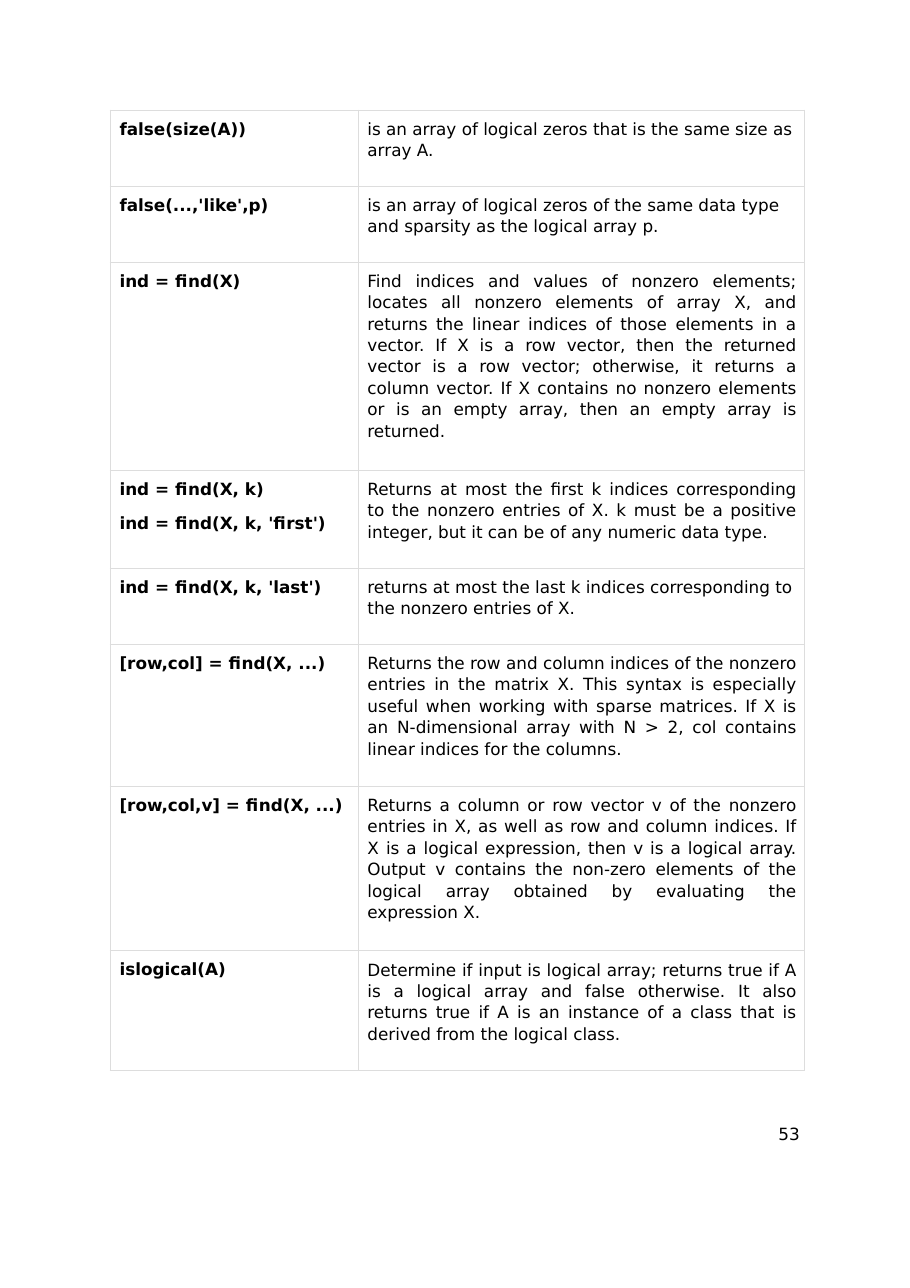
from dataclasses import dataclass

from lxml.etree import SubElement as add_child
from pptx import Presentation
from pptx.dml.color import RGBColor as Color
from pptx.enum.text import MSO_ANCHOR as Anchor, PP_ALIGN as Align
from pptx.oxml import parse_xml
from pptx.oxml.ns import nsdecls, qn
from pptx.slide import Slide
from pptx.util import Pt

COLORS = {"text": "000000", "border": "DDDDDD", "page": "FFFFFF"}
COLUMN_WIDTHS = [162.1, 292.2]
ROWS = [
    (49.7, ["false(size(A))"], Align.LEFT,
     "is an array of logical zeros that is the same size as array A."),
    (49.7, ["false(...,'like',p)"], Align.LEFT,
     "is an array of logical zeros of the same data type and sparsity as the "
     "logical array p."),
    (136.1, ["ind = find(X)"], Align.JUSTIFY,
     "Find indices and values of nonzero elements; locates all nonzero elements "
     "of array X, and returns the linear indices of those elements in a vector. "
     "If X is a row vector, then the returned vector is a row vector; otherwise, "
     "it returns a column vector. If X contains no nonzero elements or is an "
     "empty array, then an empty array is returned."),
    (64, ["ind = find(X, k)", "ind = find(X, k, 'first')"], Align.JUSTIFY,
     "Returns at most the first k indices corresponding to the nonzero entries "
     "of X. k must be a positive integer, but it can be of any numeric data type."),
    (49.7, ["ind = find(X, k, 'last')"], Align.LEFT,
     "returns at most the last k indices corresponding to the nonzero entries of X."),
    (92.9, ["[row,col] = find(X, ...)"], Align.JUSTIFY,
     "Returns the row and column indices of the nonzero entries in the matrix X. "
     "This syntax is especially useful when working with sparse matrices. If X is "
     "an N-dimensional array with N > 2, col contains linear indices for the columns."),
    (107.5, ["[row,col,v] = find(X, ...)"], Align.JUSTIFY,
     "Returns a column or row vector v of the nonzero entries in X, as well as row "
     "and column indices. If X is a logical expression, then v is a logical array. "
     "Output v contains the non-zero elements of the logical array obtained by "
     "evaluating the expression X."),
    (78.5, ["islogical(A)"], Align.JUSTIFY,
     "Determine if input is logical array; returns true if A is a logical array "
     "and false otherwise. It also returns true if A is an instance of a class "
     "that is derived from the logical class."),
]


@dataclass
class PageBuilder:
    """Draw styled elements on one slide, with lengths in points."""

    slide: Slide
    font: str = "DejaVu Sans"
    size: float = 11
    tracking: str = "-3"

    def background(self):
        fill = self.slide.background.fill
        fill.solid()
        fill.fore_color.rgb = Color.from_string(COLORS["page"])

    def add_lines(self, frame, lines, bold=False, align=Align.LEFT, spacing=1.0, gap=0):
        frame.word_wrap = True
        for index, line in enumerate(lines):
            para = frame.add_paragraph() if index else frame.paragraphs[0]
            para.alignment = align
            para.line_spacing = spacing
            if index:
                para.space_before = Pt(gap)
            para.font.name = self.font
            para.font.size = Pt(self.size)
            para.font.bold = bold
            para.font.color.rgb = Color.from_string(COLORS["text"])
            span = para.add_run()
            span.text = line
            span._r.get_or_add_rPr().set("spc", self.tracking)

    def style_cell(self, cell, top):
        cell.margin_left, cell.margin_top = Pt(6.2), Pt(top)
        cell.margin_right, cell.margin_bottom = Pt(5.4), Pt(0)
        cell.vertical_anchor = Anchor.TOP
        cell.fill.background()
        properties = cell._tc.get_or_add_tcPr()
        for index, side in enumerate("LRTB"):
            line = parse_xml(f'<a:ln{side} {nsdecls("a")} w="{Pt(0.75)}"/>')
            fill = add_child(line, qn("a:solidFill"))
            add_child(fill, qn("a:srgbClr")).set("val", COLORS["border"])
            properties.insert(index, line)

    def table(self, left, top, widths, rows):
        height = sum(row[0] for row in rows)
        frame = self.slide.shapes.add_table(
            len(rows), len(widths), Pt(left), Pt(top), Pt(sum(widths)), Pt(height))
        table = frame.table
        table.first_row = table.horz_banding = False
        for column, width in zip(table.columns, widths):
            column.width = Pt(width)
        for index, (height, syntax, align, meaning) in enumerate(rows):
            table.rows[index].height = Pt(height)
            name_cell, meaning_cell = table.cell(index, 0), table.cell(index, 1)
            self.style_cell(name_cell, 6.2)
            self.style_cell(meaning_cell, 5.2)
            self.add_lines(name_cell.text_frame, syntax, bold=True, gap=9.2)
            self.add_lines(meaning_cell.text_frame, [meaning], align=align, spacing=1.09)

    def page_number(self, left, top, width, height, number):
        box = self.slide.shapes.add_textbox(Pt(left), Pt(top), Pt(width), Pt(height))
        frame = box.text_frame
        frame.margin_left, frame.margin_top = Pt(8.6), Pt(1.1)
        frame.margin_right = frame.margin_bottom = Pt(0)
        self.add_lines(frame, [number])


def main():
    deck = Presentation()
    deck.slide_width, deck.slide_height = Pt(595), Pt(842)
    page = PageBuilder(deck.slides.add_slide(deck.slide_layouts[6]))
    page.background()
    page.table(72, 72, COLUMN_WIDTHS, ROWS)
    page.page_number(500.4, 733.7, 25.2, 15.1, "53")
    deck.save("out.pptx")


if __name__ == "__main__":
    main()
